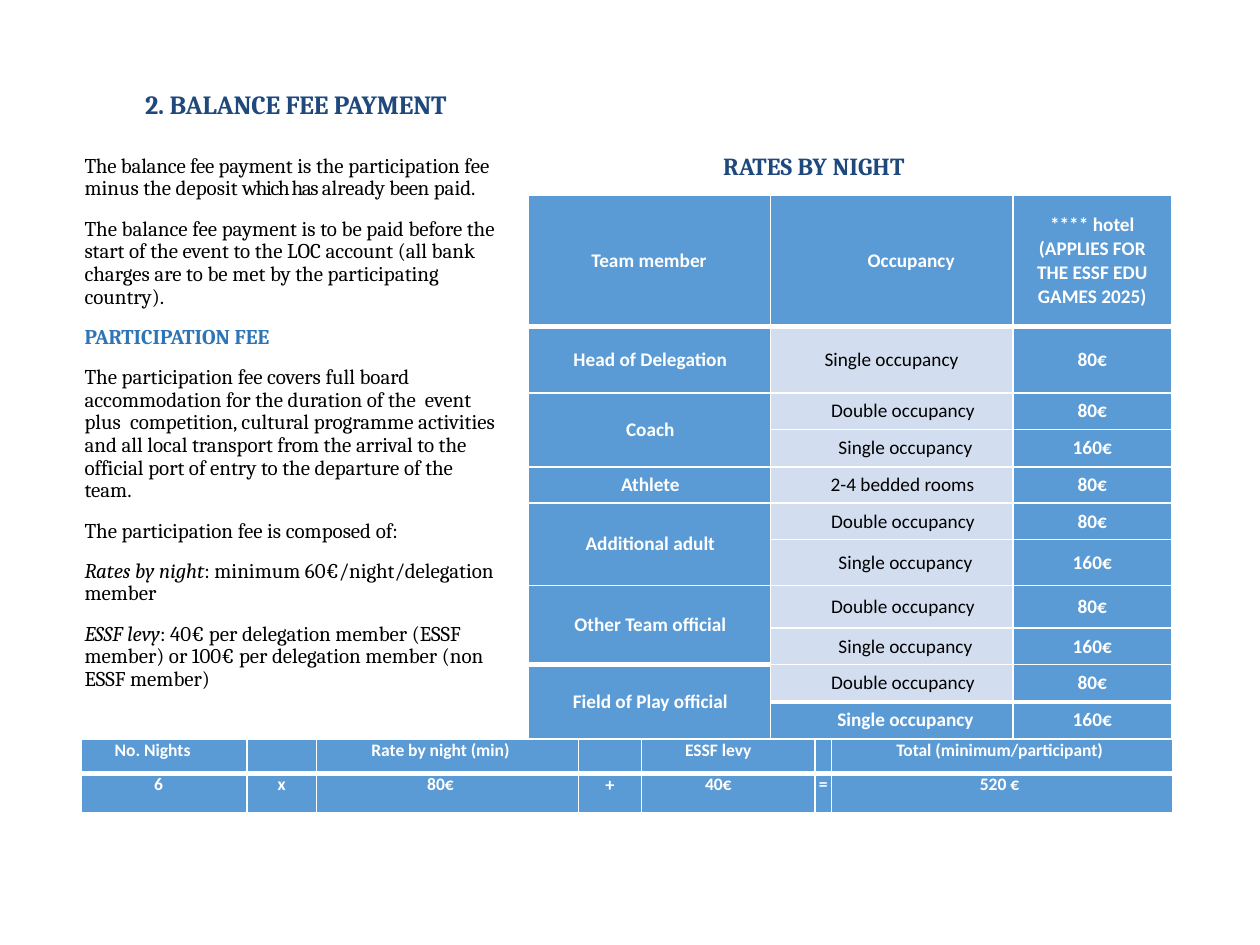
from dataclasses import dataclass

from lxml import etree
from pptx import Presentation
from pptx import util as u
from pptx.dml.color import RGBColor
from pptx.enum import text as t
from pptx.oxml.ns import qn

BLUE, PALE, WHITE, BLACK = "5B9BD5", "D2DEEF", "FFFFFF", "000000"
NAVY, HEADING = "1F497D", "2E75B6"
THIN, THICK = 1, 3


@dataclass
class Span:
    text: str
    color: str = BLACK
    bold: bool = False
    italic: bool = False
    spacing: float = 0


@dataclass
class Entry:
    text: str = ""
    fill: str = BLUE
    indent: float = 0
    first: float = 0
    right: float = 0
    rows: int = 1
    size: float = 10
    bold: bool = True


def paint(target, color: str) -> None:
    target.rgb = RGBColor.from_string(color)


def add_run(para, span: Span, font: str, size: float) -> None:
    run = para.add_run()
    run.text = span.text
    run.font.name, run.font.size = font, u.Pt(size)
    run.font.bold, run.font.italic = span.bold, span.italic
    paint(run.font.color, span.color)
    if span.spacing:
        run.font._element.set("spc", str(round(span.spacing * 100)))


def place(box, left: float, top: float, width: float, height: float) -> None:
    box.left, box.top = u.Cm(left), u.Cm(top)
    box.width, box.height = u.Cm(width), u.Cm(height)
    frame = box.text_frame
    frame.auto_size = t.MSO_AUTO_SIZE.NONE
    frame.vertical_anchor = t.MSO_ANCHOR.TOP
    frame.word_wrap = True


def set_indent(para, left: float, first: float) -> None:
    props = para._p.get_or_add_pPr()
    props.set("marL", str(u.Cm(left)))
    props.set("indent", str(u.Cm(first)))


def set_borders(cell, top: float, bottom: float) -> None:
    props = cell._tc.get_or_add_tcPr()
    for side, width in (("L", THIN), ("R", THIN), ("T", top), ("B", bottom)):
        line = etree.SubElement(props, qn(f"a:ln{side}"), w=str(u.Pt(width)))
        fill = etree.SubElement(line, qn("a:solidFill"))
        etree.SubElement(fill, qn("a:srgbClr"), val=WHITE)


def fill_cell(cell, entry: Entry, margin: float, anchor) -> None:
    cell.fill.solid()
    paint(cell.fill.fore_color, entry.fill)
    cell.margin_left, cell.margin_right = u.Cm(margin), u.Cm(margin + entry.right)
    cell.margin_top = cell.margin_bottom = 0
    cell.vertical_anchor = anchor
    para = cell.text_frame.paragraphs[0]
    para.alignment = t.PP_ALIGN.CENTER
    set_indent(para, entry.indent, entry.first)
    if entry.text:
        color = WHITE if entry.fill == BLUE else BLACK
        add_run(para, Span(entry.text, color, entry.bold), "Calibri", entry.size)
    else:
        etree.SubElement(para._p, qn("a:endParaRPr"), sz=str(round(entry.size * 100)))


def add_grid(page, left: float, top: float, widths: list[float], heights: list[float],
             entries: list[list[Entry | None]], thick_tops: set[tuple[int, int]],
             margin: float, anchor) -> None:
    """Draw a table; None marks a cell covered by the merged one above it."""
    table = page.shapes.add_table(len(heights), len(widths), u.Cm(left), u.Cm(top),
                                  u.Cm(sum(widths)), u.Cm(sum(heights))).table
    table.first_row = table.horz_banding = False
    for column, width in zip(table.columns, widths):
        column.width = u.Cm(width)
    for row, height in zip(table.rows, heights):
        row.height = u.Cm(height)
    for r, line in enumerate(entries):
        for c, item in enumerate(line):
            entry = item or Entry()
            cell = table.cell(r, c)
            set_borders(cell, THICK if (r, c) in thick_tops else THIN,
                        THICK if (r + entry.rows, c) in thick_tops else THIN)
            fill_cell(cell, entry, margin, anchor)
            if entry.rows > 1:
                cell.merge(table.cell(r + entry.rows - 1, c))


# Content
PARAGRAPHS = [
    [Span("The balance fee payment ", spacing=-0.1),
     Span("is the participation fee minus the deposit "),
     Span("which has ", spacing=-0.8), Span("already"),
     Span(" been ", spacing=-0.2), Span("paid.")],
    [Span("The balance fee payment is to be paid before the start of the event to the LOC "
          "account (all bank charges are to be met by the participating country).")],
    [Span("PARTICIPATION FEE", HEADING, bold=True)],
    [Span("The participation fee covers full board accommodation for the duration of the  "
          "event  plus  competition, cultural programme activities and all local transport "
          "from the arrival to the official port of entry to the departure of the team.")],
    [Span("The participation fee is composed of:")],
    [Span("Rates by night", italic=True), Span(": minimum 60€/night/delegation member")],
    [Span("ESSF levy", italic=True),
     Span(": 40€ per delegation member (ESSF member) or 100€ per delegation member "
          "(non ESSF member)")],
]
SINGLE = ("Single occupancy", 0.76, "160€")
DOUBLE = ("Double occupancy", 0.66, "80€")
MEMBERS = [
    ("Head of Delegation", [("Single occupancy", 0, "80€")]),
    ("Coach", [DOUBLE, SINGLE]),
    ("Athlete", [("2-4 bedded rooms", 0.64, "80€")]),
    ("Additional adult", [DOUBLE, SINGLE]),
    ("Other Team official", [DOUBLE, SINGLE]),
    ("Field of Play official", [DOUBLE, SINGLE]),
]
RATE_HEIGHTS = [2.64, 1.34, 0.74, 0.75, 0.73, 0.74, 0.92, 0.86, 0.74, 0.75, 0.74]


def rate_entries() -> list[list[Entry | None]]:
    lines = [[Entry("Team member", size=11), Entry("Occupancy", indent=0.79, size=11),
              Entry("**** hotel (APPLIES FOR THE ESSF EDU GAMES 2025)", size=11)]]
    for member, rates in MEMBERS:
        for number, (room, indent, price) in enumerate(rates):
            head = Entry(member, indent=0.05, rows=len(rates), size=11)
            lines.append([None if number else head,
                          Entry(room, PALE, indent, -0.2, size=11, bold=False),
                          Entry(price, size=11)])
    lines[-1][1].fill, lines[-1][1].bold = BLUE, True
    return lines


def main() -> None:
    deck = Presentation()
    deck.slide_width, deck.slide_height = u.Cm(25.4), u.Cm(19.05)
    page = deck.slides.add_slide(deck.slide_layouts[1])

    # Title
    title = page.shapes.title
    place(title, 2.67, 1.73, 6.86, 1.6)
    para = title.text_frame.paragraphs[0]
    para.alignment, para.line_spacing = t.PP_ALIGN.LEFT, 0.9
    add_run(para, Span("2. BALANCE FEE PAYMENT", NAVY, True, spacing=-0.1), "Cambria", 15)

    # Explanation
    body = page.placeholders[1]
    place(body, 1.45, 3, 8.86, 11.91)
    for number, spans in enumerate(PARAGRAPHS):
        frame = body.text_frame
        para = frame.add_paragraph() if number else frame.paragraphs[0]
        set_indent(para, 0, 0)
        etree.SubElement(para._p.get_or_add_pPr(), qn("a:buNone"))
        para.line_spacing, para.space_before = 0.9, u.Pt(10 if number else 0)
        for span in spans:
            add_run(para, span, "Cambria", 12)

    # Rates by night
    heading = page.shapes.add_textbox(0, 0, 0, 0)
    place(heading, 14.33, 2.92, 4.57, 0.86)
    add_run(heading.text_frame.paragraphs[0], Span("RATES BY NIGHT", NAVY, True), "Cambria", 14)
    add_grid(page, 10.64, 3.94, [4.89, 4.89, 3.2], RATE_HEIGHTS, rate_entries(),
             {(1, 0), (1, 1), (1, 2), (9, 0), (10, 1), (10, 2)}, 0.2, t.MSO_ANCHOR.MIDDLE)

    # Sum for one participant
    total = [
        [Entry("No. Nights", right=0.46), Entry(), Entry("Rate by night (min)", right=0.28),
         Entry(), Entry("ESSF levy", right=0.4), Entry(),
         Entry("Total (minimum/participant)", right=0.1)],
        [Entry("6", right=0.22), Entry("x"), Entry("80€", right=0.28),
         Entry("+", size=10.5), Entry("40€", right=0.4), Entry("="),
         Entry("520 €", right=0.1)],
    ]
    add_grid(page, 1.63, 14.91, [3.35, 1.4, 5.28, 1.27, 3.5, 0.33, 6.88], [0.69, 0.79], total,
             {(1, c) for c in range(7)}, 0, t.MSO_ANCHOR.TOP)

    deck.save("out.pptx")


if __name__ == "__main__":
    main()
